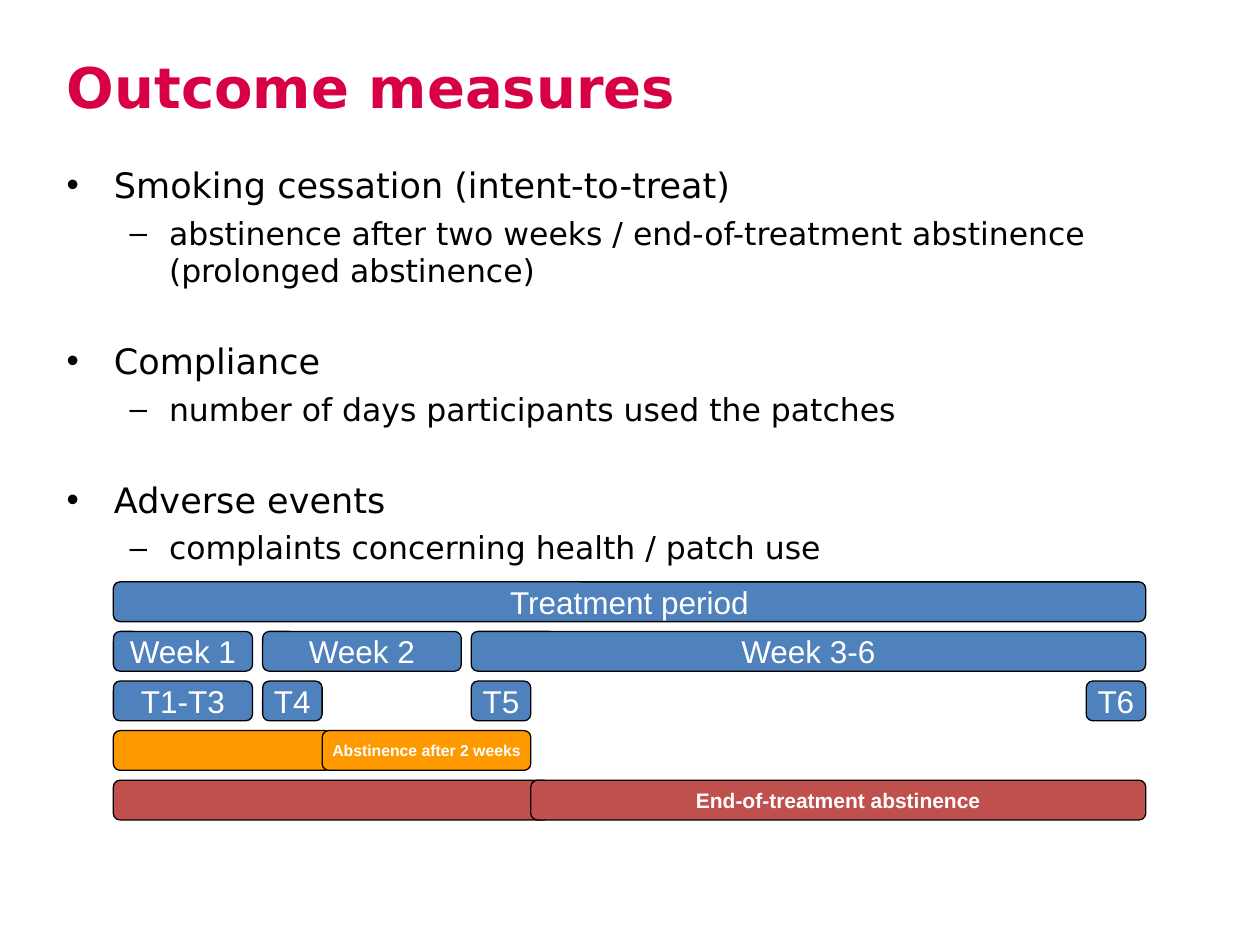
from dataclasses import dataclass

from pptx import Presentation
from pptx import util as u
from pptx.dml import color
from pptx.enum import shapes, text
from pptx.oxml import xmlchemy  # noqa: F401
from lxml import etree


@dataclass(frozen=True)
class Theme:
    """Colours, fonts and type sizes of the slide."""
    title_color: str = "D70044"
    ink: str = "000000"
    white: str = "FFFFFF"
    blue: str = "4F81BD"
    orange: str = "FF9900"
    red: str = "C0504D"
    text_font: str = "DejaVu Sans"
    bar_font: str = "Arial"
    title_size: float = 32
    topic_size: float = 20
    detail_size: float = 18
    outcome_size: float = 12
    small_size: float = 9


THEME = Theme()
LEFT, RIGHT = 64.8, 654.7
WEEK_2, WEEK_3 = 150.1, 269.3
POINT_WIDTH = 34
ROW_TOP, ROW_PITCH, ROW_HEIGHT = 332.5, 28.33, 22.7

MEASURES = [
    ("Smoking cessation (intent-to-treat)",
     "abstinence after two weeks / end-of-treatment abstinence (prolonged abstinence)"),
    ("Compliance", "number of days participants used the patches"),
    ("Adverse events", "complaints concerning health / patch use"),
]

BARS = [
    (0, LEFT, RIGHT, "Treatment period", THEME.blue, THEME.detail_size),
    (1, LEFT, 144.3, "Week 1", THEME.blue, THEME.detail_size),
    (1, WEEK_2, 263.6, "Week 2", THEME.blue, THEME.detail_size),
    (1, WEEK_3, RIGHT, "Week 3-6", THEME.blue, THEME.detail_size),
    (2, LEFT, 144.3, "T1-T3", THEME.blue, THEME.detail_size),
    (2, WEEK_2, WEEK_2 + POINT_WIDTH, "T4", THEME.blue, THEME.detail_size),
    (2, WEEK_3, WEEK_3 + POINT_WIDTH, "T5", THEME.blue, THEME.detail_size),
    (2, RIGHT - POINT_WIDTH, RIGHT, "T6", THEME.blue, THEME.detail_size),
    (3, LEFT, 189.4, "", THEME.orange, THEME.small_size),
    (3, WEEK_2 + POINT_WIDTH, WEEK_3 + POINT_WIDTH, "Abstinence after 2 weeks",
     THEME.orange, THEME.small_size),
    (4, LEFT, 314.6, "", THEME.red, THEME.outcome_size),
    (4, WEEK_3 + POINT_WIDTH, RIGHT, "End-of-treatment abstinence",
     THEME.red, THEME.outcome_size),
]


def place(shape, left, top, width, height):
    """Move and size a shape, in points."""
    shape.left, shape.top = u.Pt(left), u.Pt(top)
    shape.width, shape.height = u.Pt(width), u.Pt(height)


def style(paragraph, font, size, rgb, bold=False):
    """Format every run of a paragraph."""
    for run in paragraph.runs:
        run.font.name, run.font.size, run.font.bold = font, u.Pt(size), bold
        run.font.color.rgb = color.RGBColor.from_string(rgb)


def set_bullet(paragraph, character, margin, hanging):
    """Give a paragraph a bullet character with a hanging indent."""
    properties = paragraph._p.get_or_add_pPr()
    properties.set("marL", str(u.Pt(margin)))
    properties.set("indent", str(-u.Pt(hanging)))
    namespace = properties.nsmap["a"]
    font = etree.SubElement(properties, f"{{{namespace}}}buFont")
    font.set("typeface", THEME.bar_font)
    bullet = etree.SubElement(properties, f"{{{namespace}}}buChar")
    bullet.set("char", character)


def add_title(slide, wording):
    """Fill and format the title placeholder."""
    title = slide.shapes.title
    place(title, 31, 4.3, 432, 90)
    frame = title.text_frame
    frame.text = wording
    frame.auto_size = text.MSO_AUTO_SIZE.NONE
    frame.vertical_anchor = text.MSO_ANCHOR.MIDDLE
    paragraph = frame.paragraphs[0]
    paragraph.alignment = text.PP_ALIGN.LEFT
    style(paragraph, THEME.text_font, THEME.title_size, THEME.title_color, True)


def add_measures(slide, measures):
    """Add the two-level bullet list."""
    box = slide.shapes.add_textbox(u.Pt(31), u.Pt(90), u.Pt(674.6), u.Pt(240))
    frame = box.text_frame
    frame.word_wrap = True
    for index, (topic, detail) in enumerate(measures):
        paragraph = frame.add_paragraph() if index else frame.paragraphs[0]
        paragraph.text = topic
        set_bullet(paragraph, "•", 27, 27)
        paragraph.space_before = u.Pt(29 if index else 0)
        style(paragraph, THEME.text_font, THEME.topic_size, THEME.ink)
        paragraph = frame.add_paragraph()
        paragraph.text = detail
        paragraph.level = 1
        set_bullet(paragraph, "–", 58.5, 22.5)
        paragraph.space_before = u.Pt(4.5)
        style(paragraph, THEME.text_font, THEME.detail_size, THEME.ink)


def add_bar(slide, row, start, end, label, fill, size):
    """Add one rounded timeline bar, with its label if it has one."""
    bar = slide.shapes.add_shape(
        shapes.MSO_SHAPE.ROUNDED_RECTANGLE, u.Pt(start), u.Pt(ROW_TOP + row * ROW_PITCH),
        u.Pt(end - start), u.Pt(ROW_HEIGHT))
    bar.shadow.inherit = False
    bar.fill.solid()
    bar.fill.fore_color.rgb = color.RGBColor.from_string(fill)
    bar.line.color.rgb = color.RGBColor.from_string(THEME.ink)
    bar.line.width = u.Pt(0.75)
    if label:
        frame = bar.text_frame
        frame.text = label
        frame.word_wrap = False
        frame.vertical_anchor = text.MSO_ANCHOR.MIDDLE
        paragraph = frame.paragraphs[0]
        paragraph.alignment = text.PP_ALIGN.CENTER
        style(paragraph, THEME.bar_font, size, THEME.white, size < THEME.detail_size)


def main():
    """Build and save the slide."""
    presentation = Presentation()
    presentation.slide_width, presentation.slide_height = u.Pt(720), u.Pt(540)
    slide = presentation.slides.add_slide(presentation.slide_layouts[5])
    add_title(slide, "Outcome measures")
    add_measures(slide, MEASURES)
    for bar in BARS:
        add_bar(slide, *bar)
    presentation.save("out.pptx")


if __name__ == "__main__":
    main()
